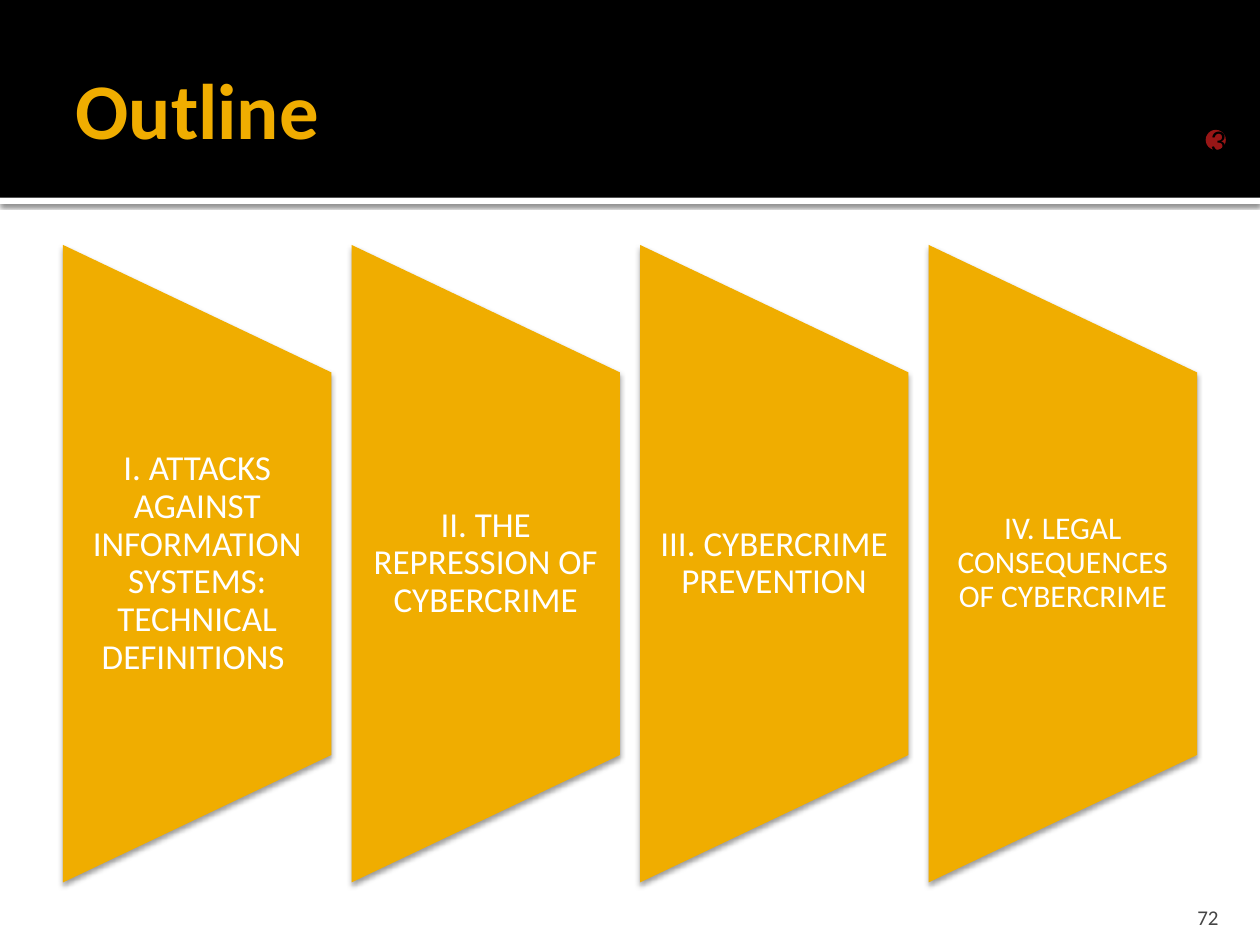
"""Build the outline slide: a black title band above four slanted section panels."""
from dataclasses import dataclass

from lxml import etree
from pptx import Presentation
from pptx.dml.color import RGBColor
from pptx.enum.shapes import MSO_SHAPE
from pptx.enum.text import MSO_ANCHOR, PP_ALIGN
from pptx.oxml.ns import qn
from pptx.shapes.autoshape import Shape
from pptx.slide import Slide
from pptx.util import Pt

RECT, OVAL = MSO_SHAPE.RECTANGLE, MSO_SHAPE.OVAL
TRAPEZOID = MSO_SHAPE.FLOWCHART_MANUAL_OPERATION
MIDDLE, BOTTOM = MSO_ANCHOR.MIDDLE, MSO_ANCHOR.BOTTOM
LEFT, CENTER, RIGHT = PP_ALIGN.LEFT, PP_ALIGN.CENTER, PP_ALIGN.RIGHT


@dataclass(frozen=True)
class Theme:
    font: str = "Calibri"
    black: str = "000000"
    white: str = "FFFFFF"
    gold: str = "F0AD00"
    red: str = "981616"
    grey: str = "454545"
    title_size: float = 45
    panel_size: float = 20
    small_panel_size: float = 18
    badge_size: float = 18
    number_size: float = 12


@dataclass(frozen=True)
class Box:
    left: float
    top: float
    width: float
    height: float

    def lengths(self) -> list[Pt]:
        return [Pt(v) for v in (self.left, self.top, self.width, self.height)]


@dataclass(frozen=True)
class Shadow:
    alpha: int
    blur: float
    distance: float


@dataclass(frozen=True)
class Panel:
    text: str
    size: float
    inset: float


THEME = Theme()
BAND_SHADOW = Shadow(60, 2.5, 0.8)
PANEL_SHADOW = Shadow(38, 3.1, 2)
PANEL_LEFT, PANEL_PITCH, PANEL_WIDTH, PANEL_HEIGHT = 36, 164.88, 153.4, 364.3
PANEL_MIDDLE, PANEL_TEXT_HEIGHT = 322.1, 219
PANELS = [
    Panel("I. ATTACKS AGAINST INFORMATION SYSTEMS: TECHNICAL DEFINITIONS ", THEME.panel_size, 10),
    Panel("II. THE REPRESSION OF CYBERCRIME", THEME.panel_size, 10),
    Panel("III. CYBERCRIME PREVENTION", THEME.panel_size, 10),
    Panel("IV. LEGAL CONSEQUENCES OF CYBERCRIME", THEME.small_panel_size, 9),
]


def add_shadow(sp: Shape, shadow: Shadow) -> None:
    """Cast a soft shadow straight down."""
    effects = sp.element.spPr.find(qn("a:effectLst"))
    outer = etree.SubElement(effects, qn("a:outerShdw"), {
        "blurRad": str(Pt(shadow.blur)), "dist": str(Pt(shadow.distance)),
        "dir": "5400000", "algn": "ctr", "rotWithShape": "0"})
    color = etree.SubElement(outer, qn("a:srgbClr"), val=THEME.black)
    etree.SubElement(color, qn("a:alpha"), val=str(shadow.alpha * 1000))


def add_shape(s: Slide, kind: MSO_SHAPE, box: Box, fill: str,
              shadow: Shadow | None = None) -> Shape:
    """Add a filled shape without an outline."""
    sp = s.shapes.add_shape(kind, *box.lengths())
    sp.fill.solid()
    sp.fill.fore_color.rgb = RGBColor.from_string(fill)
    sp.line.fill.background()
    sp.shadow.inherit = False
    if shadow:
        add_shadow(sp, shadow)
    return sp


def set_text(sp: Shape, text: str, size: float, color: str, align: PP_ALIGN,
             anchor: MSO_ANCHOR = MIDDLE, bold: bool = False, wrap: bool = True,
             insets: tuple[float, float, float, float] = (7.2, 3.6, 7.2, 3.6)) -> None:
    """Fill a shape with one formatted paragraph."""
    tf = sp.text_frame
    tf.text = text
    tf.word_wrap = wrap
    tf.vertical_anchor = anchor
    tf.margin_left, tf.margin_top, tf.margin_right, tf.margin_bottom = map(Pt, insets)
    p = tf.paragraphs[0]
    p.alignment = align
    font = p.runs[0].font
    font.name, font.size, font.bold = THEME.font, Pt(size), bold
    font.color.rgb = RGBColor.from_string(color)


def add_title(s: Slide, text: str) -> None:
    """Place the title placeholder in front of the band."""
    title = s.shapes.title
    s.shapes.element.append(title.element)
    title.left, title.top, title.width, title.height = Box(36, 12.24, 648, 98.64).lengths()
    set_text(title, text, THEME.title_size, THEME.gold, LEFT, bold=True,
             insets=(7.2, 3.6, 3.6, 3.6))


def add_panel(s: Slide, index: int, panel: Panel) -> None:
    """Draw one slanted panel with its upright caption."""
    left = PANEL_LEFT + index * PANEL_PITCH
    middle = left + PANEL_WIDTH / 2
    box = Box(middle - PANEL_HEIGHT / 2, PANEL_MIDDLE - PANEL_WIDTH / 2,
              PANEL_HEIGHT, PANEL_WIDTH)
    add_shape(s, TRAPEZOID, box, THEME.gold, PANEL_SHADOW).rotation = 270
    caption = Box(left, PANEL_MIDDLE - PANEL_TEXT_HEIGHT / 2, PANEL_WIDTH, PANEL_TEXT_HEIGHT)
    sp = s.shapes.add_textbox(*caption.lengths())
    set_text(sp, panel.text, panel.size, THEME.white, CENTER,
             insets=(panel.inset, 0, panel.inset, 0))
    sp.text_frame.paragraphs[0].line_spacing = 0.9


def main() -> None:
    """Build and save the slide."""
    prs = Presentation()
    prs.slide_width, prs.slide_height = Pt(720), Pt(540)
    s = prs.slides.add_slide(prs.slide_layouts[5])
    add_shape(s, RECT, Box(0, 113, 720, 3.6), THEME.white, BAND_SHADOW)
    add_shape(s, RECT, Box(0, 0, 720, 113), THEME.black)
    add_title(s, "Outline")
    number = s.shapes.add_textbox(*Box(645.84, 509.76, 57.6, 21.6).lengths())
    set_text(number, "72", THEME.number_size, THEME.grey, RIGHT, BOTTOM,
             insets=(7.2, 3.6, 7.2, 0))
    badge = add_shape(s, OVAL, Box(689, 74.2, 11.5, 11.5), THEME.red)
    set_text(badge, "3", THEME.badge_size, THEME.black, LEFT, wrap=False)
    for index, panel in enumerate(PANELS):
        add_panel(s, index, panel)
    prs.save("out.pptx")


if __name__ == "__main__":
    main()
